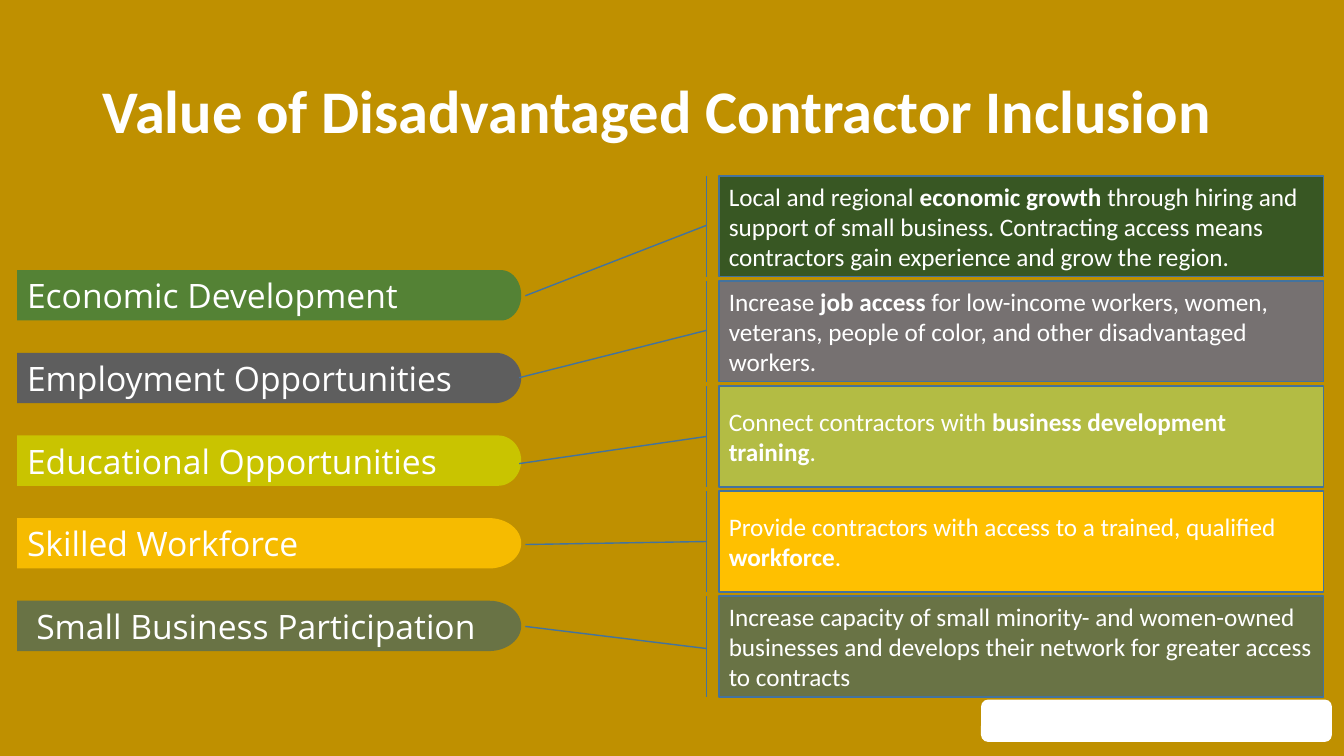
from math import cos, pi, sin

from pptx import Presentation
from pptx.dml.color import RGBColor
from pptx.enum.shapes import MSO_SHAPE
from pptx.enum.text import MSO_ANCHOR, PP_ALIGN
from pptx.util import Inches, Pt

COLORS = {
    "background": "BF9000", "white": "FFFFFF", "callout_line": "43739E",
    "green": "548235", "gray": "5E5E5E", "lime": "C9C400",
    "amber": "F6BB00", "olive": "697345",
    "dark_green": "385723", "warm_gray": "767171",
    "pale_lime": "B3BC44", "gold": "FFC000",
}

# label, fill, x where the rounded end begins, left text inset
TABS = [
    ("Economic Development", "green", 4.97, 0.1),
    ("Employment Opportunities", "gray", 4.91, 0.1),
    ("Educational Opportunities", "lime", 4.94, 0.1),
    ("Skilled Workforce", "amber", 4.85, 0.1),
    ("Small Business Participation", "olive", 4.85, 0.19),
]
# fill, callout line adjustments, text pieces (every second one is bold)
BENEFITS = [
    ("dark_green", (0.49, -0.02, 1.19, -0.32),
     ["Local and regional ", "economic growth ",
      "through hiring and support of small business. Contracting access "
      "means contractors gain experience and grow the region."]),
    ("warm_gray", (0.49, -0.02, 0.96, -0.33),
     ["Increase ", "job access ",
      "for low-income workers, women, veterans, people of color, "
      "and other disadvantaged workers."]),
    ("pale_lime", (0.5, -0.02, 0.77, -0.33),
     ["Connect contractors with ", "business development training", "."]),
    ("gold", (0.5, -0.02, 0.53, -0.32),
     ["Provide contractors with access to a trained, qualiﬁed ",
      "workforce", "."]),
    ("olive", (0.52, -0.02, 0.3, -0.32),
     ["Increase capacity of small minority- and women-owned businesses and "
      "develops their network for greater access to contracts"]),
]
TAB_LEFT, TAB_RIGHT, TAB_HEIGHT = 0.17, 5.17, 0.5
ARC_STEPS = 24


def paint(shape, color):
    shape.shadow.inherit = False
    shape.fill.solid()
    shape.fill.fore_color.rgb = RGBColor.from_string(COLORS[color])
    shape.line.fill.background()


def write(shape, pieces, size, font_name):
    """Fill the shape with one left-aligned white paragraph."""
    frame = shape.text_frame
    frame.word_wrap = True
    frame.vertical_anchor = MSO_ANCHOR.MIDDLE
    paragraph = frame.paragraphs[0]
    paragraph.alignment = PP_ALIGN.LEFT
    paragraph.font.size = Pt(size)
    paragraph.font.name = font_name
    paragraph.font.color.rgb = RGBColor.from_string(COLORS["white"])
    for index, piece in enumerate(pieces):
        run = paragraph.add_run()
        run.text = piece
        if index % 2:
            run.font.bold = True
    return paragraph


prs = Presentation()
prs.slide_width, prs.slide_height = Inches(13.33), Inches(7.5)
slide = prs.slides.add_slide(prs.slide_layouts[6])
slide.background.fill.solid()
slide.background.fill.fore_color.rgb = RGBColor.from_string(COLORS["background"])

footer_plate = slide.shapes.add_shape(
    MSO_SHAPE.ROUNDED_RECTANGLE,
    Inches(9.73), Inches(6.94), Inches(3.48), Inches(0.42))
paint(footer_plate, "white")

for row, (label, color, arc_x, inset) in enumerate(TABS):
    top = 2.68 + 0.82 * row
    radius_x, radius_y = TAB_RIGHT - arc_x, TAB_HEIGHT / 2
    angles = [pi * step / ARC_STEPS - pi / 2 for step in range(ARC_STEPS + 1)]
    outline = [(arc_x + radius_x * cos(angle), top + radius_y * (1 + sin(angle)))
               for angle in angles]
    outline.append((TAB_LEFT, top + TAB_HEIGHT))
    builder = slide.shapes.build_freeform(Inches(TAB_LEFT), Inches(top))
    builder.add_line_segments([(Inches(x), Inches(y)) for x, y in outline])
    tab = builder.convert_to_shape()
    paint(tab, color)
    write(tab, [label], 24, "Open Sans")
    tab.text_frame.margin_left = Inches(inset)

for row, (color, adjustments, pieces) in enumerate(BENEFITS):
    benefit = slide.shapes.add_shape(
        MSO_SHAPE.LINE_CALLOUT_1_BORDER_AND_ACCENT_BAR,
        Inches(7.13), Inches(1.745 + 1.0425 * row), Inches(6), Inches(1))
    for index, value in enumerate(adjustments):
        benefit.adjustments[index] = value
    paint(benefit, color)
    benefit.line.color.rgb = RGBColor.from_string(COLORS["callout_line"])
    benefit.line.width = Pt(1)
    write(benefit, pieces, 18, "Calibri")

title = slide.shapes.add_textbox(
    Inches(0.92), Inches(0.4), Inches(11.5), Inches(1.45))
heading = write(title, ["Value of Disadvantaged Contractor Inclusion"], 43.2, "Calibri")
heading.font.bold = True
heading.line_spacing = 0.9

prs.save("out.pptx")
